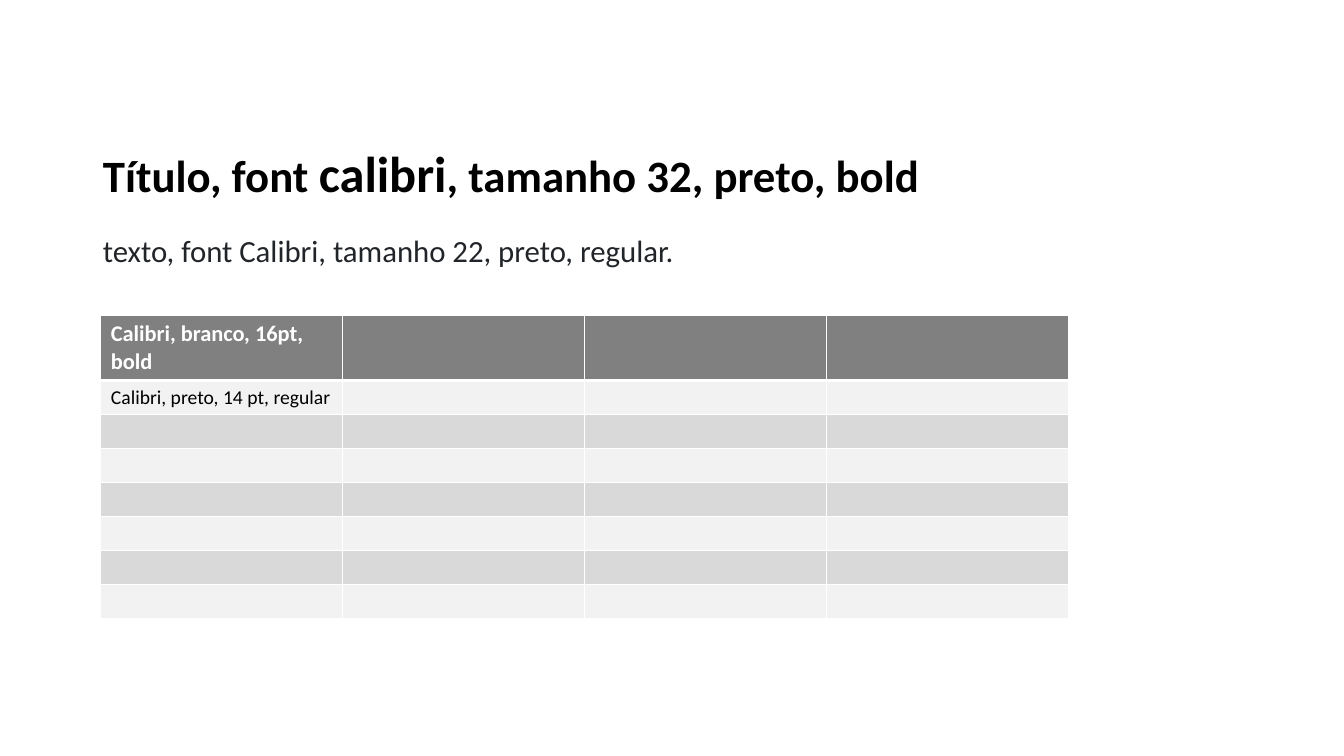
from dataclasses import dataclass

from lxml import etree
from pptx import Presentation, util as u
from pptx.dml.color import RGBColor
from pptx.enum import text as t
from pptx.oxml.ns import qn

PX = 9144
FACE = "Calibri"
WHITE = RGBColor(0xFF, 0xFF, 0xFF)
BLACK = RGBColor(0, 0, 0)
INK = RGBColor(0x21, 0x25, 0x29)
GRAY = RGBColor(0x80, 0x80, 0x80)
LIGHT = RGBColor(0xF2, 0xF2, 0xF2)
MID = RGBColor(0xD9, 0xD9, 0xD9)
COLS, ROWS = 4, 8
COL_W, HEAD_H, ROW_H = 240, 63, 33


@dataclass(frozen=True)
class Run:
    text: str
    size: int
    color: RGBColor
    bold: bool = False


@dataclass(frozen=True)
class Block:
    slot: int
    left: int
    top: int
    width: int
    height: int
    anchor: t.MSO_ANCHOR
    runs: tuple[Run, ...]


BLOCKS = (
    Block(0, 92, 140, 1089, 67, t.MSO_ANCHOR.BOTTOM, (
        Run("Título, font ", 32, BLACK, True),
        Run("calibri", 36, BLACK, True),
        Run(", tamanho 32, preto, bold", 32, BLACK, True),
    )),
    Block(1, 92, 229, 861, 44, t.MSO_ANCHOR.TOP, (
        Run("texto, font Calibri, tamanho 22, preto, regular.", 22, INK),
    )),
)
CELLS = {
    (0, 0): Run("Calibri, branco, 16pt, bold", 16, WHITE, True),
    (1, 0): Run("Calibri, preto, 14 pt, regular", 14, BLACK),
}


def apply(item, form: dict) -> None:
    for name, value in form.items():
        setattr(item, name, value)


def add_run(para, run: Run) -> None:
    part = para.add_run()
    part.text = run.text
    apply(part.font, {"name": FACE, "size": u.Pt(run.size), "bold": run.bold})
    part.font.color.rgb = run.color


def draw_block(slide, block: Block) -> None:
    shape = slide.placeholders[block.slot]
    apply(shape, {
        "left": block.left * PX, "top": block.top * PX,
        "width": block.width * PX, "height": block.height * PX,
    })
    frame = shape.text_frame
    apply(frame, {
        "word_wrap": True, "auto_size": t.MSO_AUTO_SIZE.NONE,
        "vertical_anchor": block.anchor,
    })
    para = frame.paragraphs[0]
    props = para._p.get_or_add_pPr()
    props.set("marL", "0")
    props.set("indent", "0")
    etree.SubElement(props, qn("a:buNone"))
    apply(para, {
        "alignment": t.PP_ALIGN.LEFT, "line_spacing": 0.9,
        "space_before": u.Pt(0),
    })
    for run in block.runs:
        add_run(para, run)


def add_edge(cell, side: str, width: int) -> None:
    props = cell._tc.get_or_add_tcPr()
    line = etree.SubElement(props, qn(f"a:ln{side}"), w=str(u.Pt(width)))
    fill = etree.SubElement(line, qn("a:solidFill"))
    etree.SubElement(fill, qn("a:srgbClr"), val=str(WHITE))


def draw_cell(cell, row: int, col: int) -> None:
    thick = {"T": row == 1, "B": row == 0}
    for side in "LRTB":
        add_edge(cell, side, 3 if thick.get(side) else 1)
    cell.fill.solid()
    cell.fill.fore_color.rgb = GRAY if row == 0 else LIGHT if row % 2 else MID
    para = cell.text_frame.paragraphs[0]
    if (row, col) in CELLS:
        add_run(para, CELLS[row, col])
    else:
        etree.SubElement(para._p, qn("a:endParaRPr"), sz="1400")


def draw_table(slide) -> None:
    high = HEAD_H + (ROWS - 1) * ROW_H
    frame = slide.shapes.add_table(
        ROWS, COLS, 100 * PX, 313 * PX, COLS * COL_W * PX, high * PX)
    grid = frame.table
    for col in grid.columns:
        col.width = COL_W * PX
    for row, line in enumerate(grid.rows):
        line.height = (ROW_H if row else HEAD_H) * PX
        for col, cell in enumerate(line.cells):
            draw_cell(cell, row, col)


def main() -> None:
    deck = Presentation()
    apply(deck, {"slide_width": 1333 * PX, "slide_height": 750 * PX})
    slide = deck.slides.add_slide(deck.slide_layouts[1])
    for block in BLOCKS:
        draw_block(slide, block)
    draw_table(slide)
    deck.save("out.pptx")


if __name__ == "__main__":
    main()
